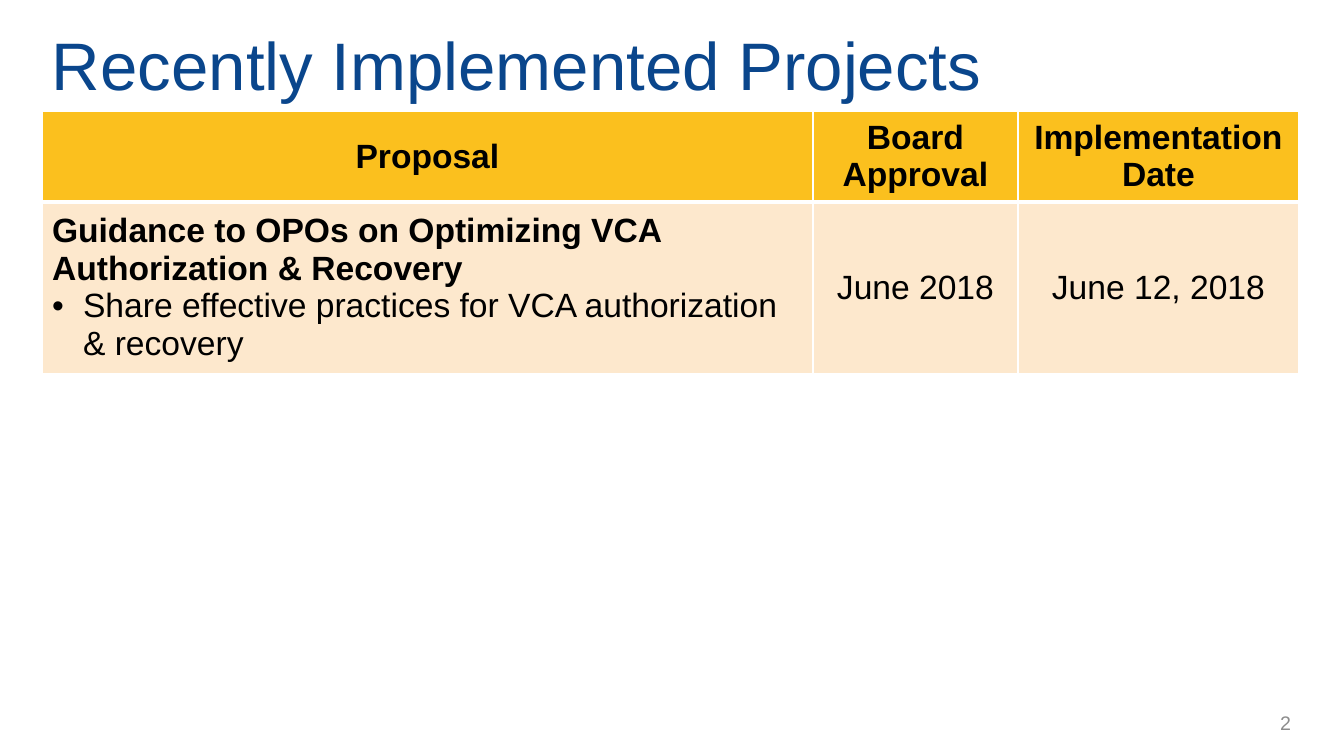
import pptx
import pptx.util
import pptx.dml.color
import pptx.enum.text
import pptx.oxml
import pptx.oxml.ns

RGBColor = pptx.dml.color.RGBColor
ALIGN = pptx.enum.text.PP_ALIGN
MIDDLE = pptx.enum.text.MSO_ANCHOR.MIDDLE

NAVY = RGBColor(0x0A, 0x46, 0x8C)
GOLD = RGBColor(0xFB, 0xC0, 0x1E)
CREAM = RGBColor(0xFD, 0xE8, 0xCD)
GRAY = RGBColor(0x8C, 0x8C, 0x8C)
BLACK = RGBColor(0, 0, 0)
WHITE = RGBColor(0xFF, 0xFF, 0xFF)

PX = 914400 / 100.8
NAMESPACE = pptx.oxml.ns.nsdecls("a")


def px(count):
    return pptx.util.Emu(round(count * PX))


def write(para, text, size=24, color=BLACK, bold=False, align=ALIGN.LEFT, bullet=False):
    if bullet:
        properties = para._p.get_or_add_pPr()
        properties.set("marL", str(px(31)))
        properties.set("indent", str(-px(31)))
        for tag in (f'<a:buFont {NAMESPACE} typeface="Arial"/>', f'<a:buChar {NAMESPACE} char="•"/>'):
            properties.append(pptx.oxml.parse_xml(tag))
    para.alignment = align
    span = para.add_run()
    span.text = text
    span.font.name = "Arial"
    span.font.size = pptx.util.Pt(size)
    span.font.bold = bold
    span.font.color.rgb = color


deck = pptx.Presentation()
deck.slide_width, deck.slide_height = px(1344), px(756)
page = deck.slides.add_slide(deck.slide_layouts[6])

# Title and page number
for left, top, width, height, text, style in (
    (42, 17, 1285, 94, "Recently Implemented Projects", dict(size=48, color=NAVY)),
    (1073, 703, 228, 40, "2", dict(size=14, color=GRAY, align=ALIGN.RIGHT)),
):
    box = page.shapes.add_textbox(px(left), px(top), px(width), px(height))
    box.text_frame.word_wrap = True
    box.text_frame.vertical_anchor = MIDDLE
    write(box.text_frame.paragraphs[0], text, **style)

# Project table
column_widths = (771, 205, 281)
row_heights = (84, 160)
projects = page.shapes.add_table(
    2, 3, px(42), px(111), px(sum(column_widths)), px(sum(row_heights))
).table
for column, width in zip(projects.columns, column_widths):
    column.width = px(width)
for row, height in zip(projects.rows, row_heights):
    row.height = px(height)

# Cell borders and fills, with a heavier rule under the header
for row_index, (fill, top_rule, bottom_rule) in enumerate(((GOLD, 1, 3), (CREAM, 3, 1))):
    for cell in projects.rows[row_index].cells:
        properties = cell._tc.get_or_add_tcPr()
        for side, points in (("L", 1), ("R", 1), ("T", top_rule), ("B", bottom_rule)):
            properties.append(pptx.oxml.parse_xml(
                f'<a:ln{side} {NAMESPACE} w="{pptx.util.Pt(points)}"><a:solidFill>'
                f'<a:srgbClr val="{WHITE}"/></a:solidFill></a:ln{side}>'
            ))
        cell.fill.solid()
        cell.fill.fore_color.rgb = fill
        cell.vertical_anchor = MIDDLE

# Header and dates
for column_index, heading in enumerate(("Proposal", "Board Approval", "Implementation Date")):
    write(projects.cell(0, column_index).text_frame.paragraphs[0], heading, bold=True, align=ALIGN.CENTER)
for column_index, date in enumerate(("June 2018", "June 12, 2018"), start=1):
    write(projects.cell(1, column_index).text_frame.paragraphs[0], date, align=ALIGN.CENTER)

# Proposal
proposal = projects.cell(1, 0).text_frame
write(proposal.paragraphs[0], "Guidance to OPOs on Optimizing VCA Authorization & Recovery", bold=True)
write(proposal.add_paragraph(), "Share effective practices for VCA authorization & recovery", bullet=True)

deck.save("out.pptx")
